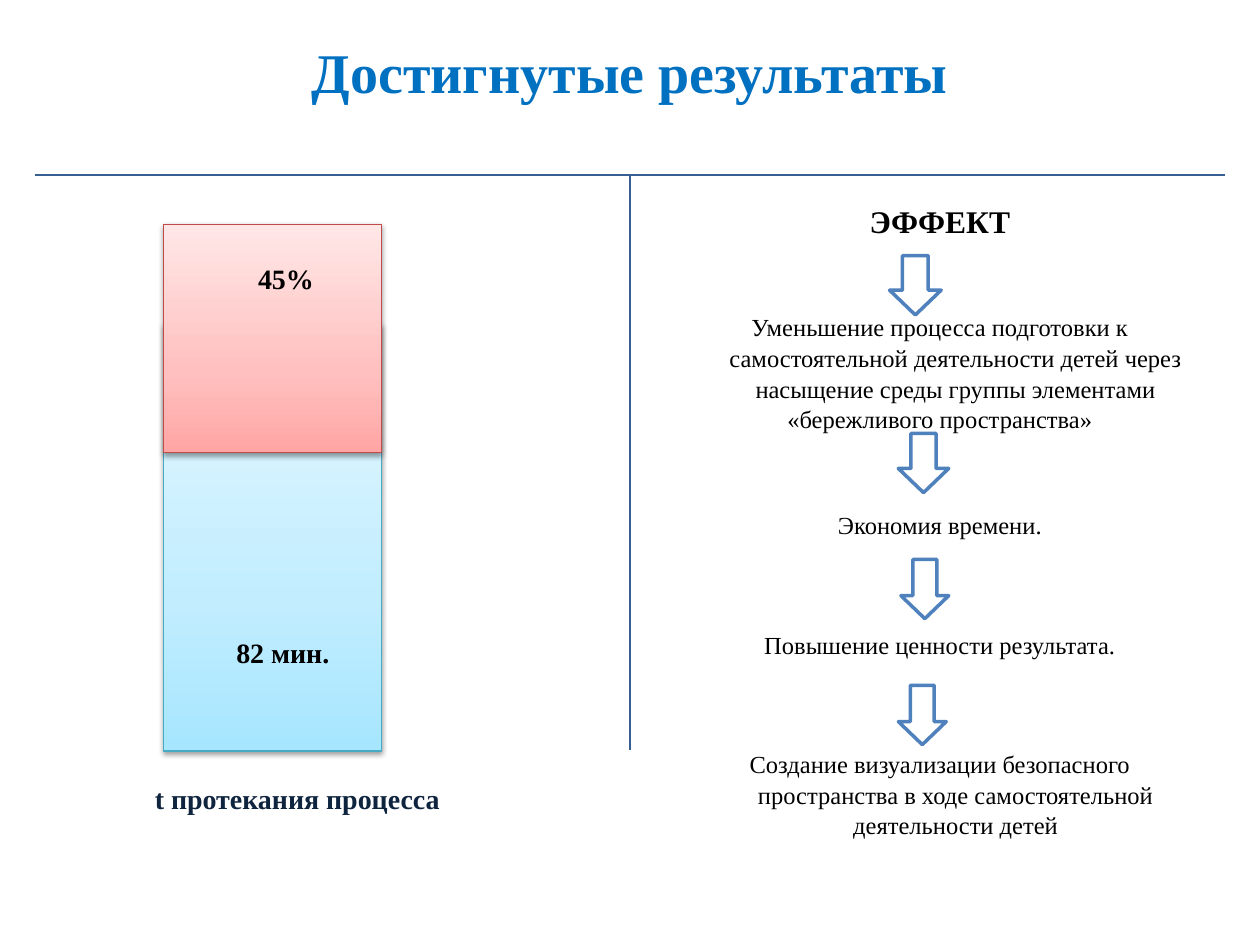
from lxml.etree import SubElement
from pptx import Presentation
from pptx.dml.color import RGBColor
from pptx.enum.shapes import MSO_CONNECTOR, MSO_SHAPE
from pptx.enum.text import MSO_ANCHOR, PP_ALIGN
from pptx.oxml import parse_xml
from pptx.oxml.ns import nsdecls, qn
from pptx.util import Inches, Pt

TITLE = "Достигнутые результаты"
# left, top, width, height, border, gradient stops from bottom to top
BARS = [
    (1.3, 2.57, 1.73, 3.39, "46AAC5", ("A7E6FF", "C1EDFF", "E7F8FF")),
    (1.3, 1.78, 1.73, 1.81, "BF4C48", ("FFA6A5", "FFC0BF", "FFE7E7")),
]
STOPS = (0, 35, 100)
DIVIDERS = [(0.28, 1.39, 9.72, 1.39), (5, 1.39, 5, 5.95)]
# left, top, width
ARROWS = [(7.06, 2.03, 0.41), (7.13, 3.44, 0.4), (7.15, 4.44, 0.38), (7.13, 5.44, 0.38)]
ARROW_HEIGHT = 0.47
# text, left, top, width, height, anchor, colour
LABELS = [
    ("45%", 1.52, 2.03, 1.5, 0.37, MSO_ANCHOR.TOP, "000000"),
    ("82 мин.", 1.46, 3.91, 1.57, 1.45, MSO_ANCHOR.BOTTOM, "000000"),
    ("t протекания процесса", 1.06, 6.15, 2.6, 0.37, MSO_ANCHOR.TOP, "0F243E"),
]
EFFECT_TITLE = "ЭФФЕКТ"
# text, space before in points
EFFECTS = [
    ("Уменьшение процесса подготовки к самостоятельной деятельности детей "
     "через насыщение среды группы элементами", 41),
    ("«бережливого пространства»", 0),
    ("Экономия времени.", 43.3),
    ("Повышение ценности результата.", 50.7),
    ("Создание визуализации безопасного пространства в ходе самостоятельной "
     "деятельности детей", 50.7),
]


def rgb(colour):
    return RGBColor.from_string(colour)


def place(shape, left, top, width, height):
    shape.left, shape.top = Inches(left), Inches(top)
    shape.width, shape.height = Inches(width), Inches(height)


def write(paragraph, text, size, colour="000000", bold=True):
    run = paragraph.add_run()
    run.text = text
    paragraph.alignment = PP_ALIGN.CENTER
    font_format = {"name": "Times New Roman", "size": Pt(size), "bold": bold}
    for name, value in font_format.items():
        setattr(run.font, name, value)
    run.font.color.rgb = rgb(colour)


def add_text_frame(slide, left, top, width, height, anchor=MSO_ANCHOR.TOP):
    box = slide.shapes.add_textbox(*map(Inches, (left, top, width, height)))
    box.text_frame.word_wrap = True
    box.text_frame.vertical_anchor = anchor
    return box.text_frame


def add_outlined(slide, kind, left, top, width, height, colour, line_width):
    shape = slide.shapes.add_shape(kind, *map(Inches, (left, top, width, height)))
    shape.shadow.inherit = False
    shape.fill.solid()
    shape.fill.fore_color.rgb = rgb("FFFFFF")
    shape.line.color.rgb = rgb(colour)
    shape.line.width = Pt(line_width)
    return shape


def add_gradient(shape, colours):
    """Replace the plain fill with a gradient that runs from bottom to top."""
    stops = "".join(
        f'<a:gs pos="{position * 1000}"><a:srgbClr val="{colour}"/></a:gs>'
        for position, colour in zip(STOPS, colours))
    gradient = parse_xml(
        f'<a:gradFill {nsdecls("a")} rotWithShape="1"><a:gsLst>{stops}</a:gsLst>'
        '<a:lin ang="16200000" scaled="0"/></a:gradFill>')
    properties = shape.element.spPr
    properties.replace(properties.find(qn("a:solidFill")), gradient)


def add_shadow(shape):
    effects = shape.element.spPr.find(qn("a:effectLst"))
    effects.append(parse_xml(
        f'<a:outerShdw {nsdecls("a")} blurRad="{Pt(3.1)}" dist="{Pt(1.6)}" '
        'dir="5400000" rotWithShape="0"><a:srgbClr val="000000">'
        '<a:alpha val="38000"/></a:srgbClr></a:outerShdw>'))


def add_divider(slide, *ends):
    line = slide.shapes.add_connector(MSO_CONNECTOR.STRAIGHT, *map(Inches, ends))
    line.line.color.rgb = rgb("376092")
    line.line.width = Pt(1.5)
    SubElement(line.element.spPr, qn("a:effectLst"))


def add_effects(slide):
    frame = add_text_frame(slide, 5.36, 1.54, 4.2, 5.12)
    heading = frame.paragraphs[0]
    heading.line_spacing = 1.04
    write(heading, EFFECT_TITLE, 18)
    for text, space in EFFECTS:
        paragraph = frame.add_paragraph()
        paragraph.line_spacing = 1.04
        paragraph.space_before = Pt(space)
        properties = paragraph._p.get_or_add_pPr()
        properties.set("marL", str(Inches(0.25)))
        properties.set("indent", str(Inches(-0.25)))
        write(paragraph, text, 14, bold=False)


def main():
    presentation = Presentation()
    presentation.slide_width, presentation.slide_height = Inches(10), Inches(7.5)
    slide = presentation.slides.add_slide(presentation.slide_layouts[5])

    title = slide.shapes.title
    place(title, 0.12, 0.21, 9.76, 0.71)
    title.text_frame.vertical_anchor = MSO_ANCHOR.MIDDLE
    write(title.text_frame.paragraphs[0], TITLE, 32, "0070C0")

    for *box, border, colours in BARS:
        bar = add_outlined(slide, MSO_SHAPE.RECTANGLE, *box, border, 0.75)
        add_gradient(bar, colours)
        add_shadow(bar)
    for ends in DIVIDERS:
        add_divider(slide, *ends)
    for text, *box, anchor, colour in LABELS:
        frame = add_text_frame(slide, *box, anchor)
        write(frame.paragraphs[0], text, 16, colour)
    add_effects(slide)
    for left, top, width in ARROWS:
        arrow = add_outlined(slide, MSO_SHAPE.DOWN_ARROW, left, top, width,
                             ARROW_HEIGHT, "4F81BD", 2)
        arrow.adjustments[0], arrow.adjustments[1] = 0.5, 0.48
    presentation.save("out.pptx")


if __name__ == "__main__":
    main()
